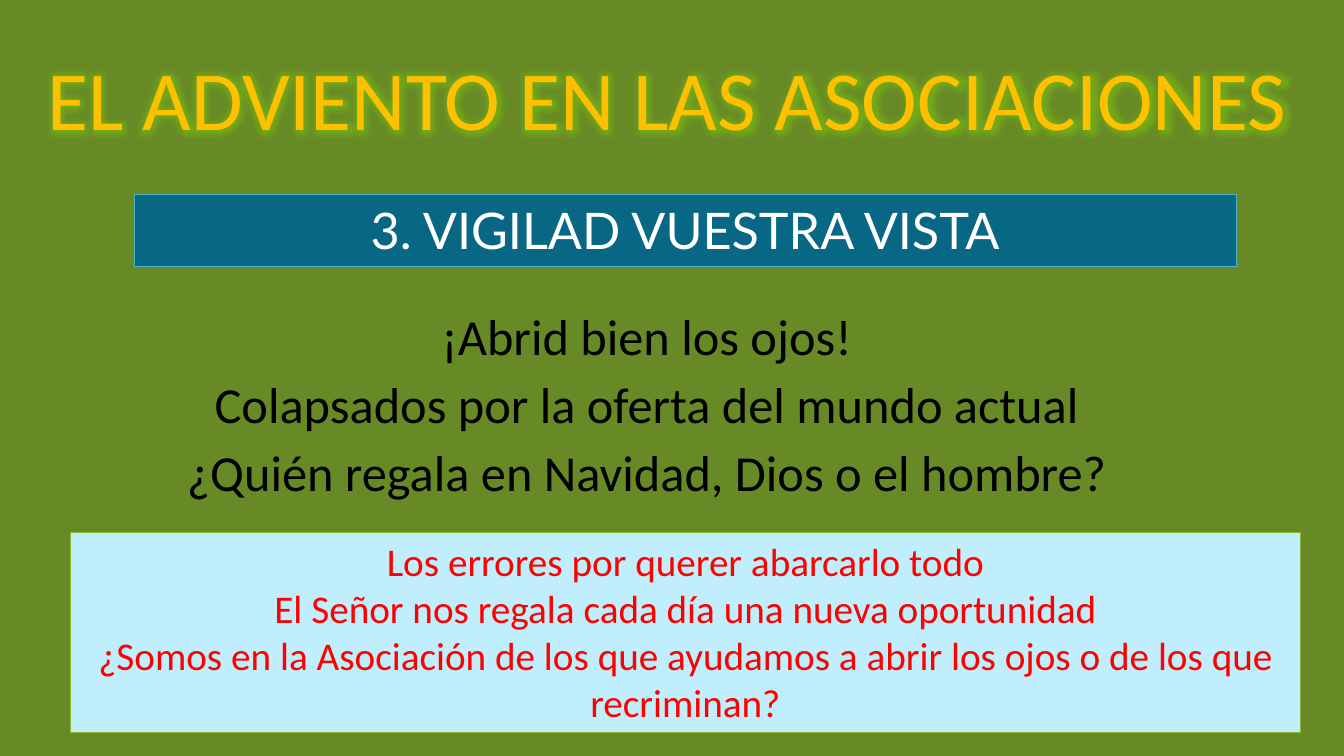
from lxml import etree
from pptx import Presentation
from pptx.dml.color import RGBColor
from pptx.enum import shapes, text
from pptx.oxml import ns
from pptx.util import Pt

GREEN = RGBColor(0x67, 0x8A, 0x26)
GOLD = RGBColor(0xFF, 0xC0, 0x00)
BLACK = RGBColor(0x00, 0x00, 0x00)
WHITE = RGBColor(0xFF, 0xFF, 0xFF)
RED = RGBColor(0xFF, 0x00, 0x00)
TEAL = RGBColor(0x07, 0x67, 0x85)
AQUA = RGBColor(0x4A, 0xB5, 0xC4)
SKY = RGBColor(0xC1, 0xEE, 0xFC)
LIME = RGBColor(0x8A, 0xB8, 0x33)
GLOW = RGBColor(0x76, 0xB2, 0x14)


def write(shape, lines, size, color, font="Calibri", anchor=text.MSO_ANCHOR.TOP,
          spacing=1.0, before=0):
    frame = shape.text_frame
    frame.word_wrap = True
    frame.vertical_anchor = anchor
    frame.text = "\n".join(lines)
    for para in frame.paragraphs:
        para.alignment = text.PP_ALIGN.CENTER
        para.line_spacing = spacing
        para.space_before = Pt(before)
        style = para.runs[0].font
        style.name, style.size = font, Pt(size)
        style.color.rgb = color


def add_glow(run, color, radius):
    props = run.font._element
    effects = etree.Element(ns.qn("a:effectLst"))
    glow = etree.SubElement(effects, ns.qn("a:glow"), rad=str(Pt(radius)))
    tint = etree.SubElement(glow, ns.qn("a:srgbClr"), val=str(color))
    etree.SubElement(tint, ns.qn("a:alpha"), val="80000")
    props.find(ns.qn("a:solidFill")).addnext(effects)


def add_text(slide, box):
    return slide.shapes.add_textbox(*map(Pt, box))


def add_panel(slide, box, fill, edge):
    panel = slide.shapes.add_shape(shapes.MSO_SHAPE.RECTANGLE, *map(Pt, box))
    panel.shadow.inherit = False
    panel.fill.solid()
    panel.fill.fore_color.rgb = fill
    panel.line.color.rgb = edge
    panel.line.width = Pt(0.5)
    return panel


def add_title(slide, box):
    title = add_text(slide, box)
    write(title, ["EL ADVIENTO EN LAS ASOCIACIONES"], 60, GOLD,
          anchor=text.MSO_ANCHOR.BOTTOM, spacing=0.9)
    add_glow(title.text_frame.paragraphs[0].runs[0], GLOW, 11)


def add_body(slide, box):
    write(add_text(slide, box), [
        "¡Abrid bien los ojos!",
        "Colapsados por la oferta del mundo actual",
        "¿Quién regala en Navidad, Dios o el hombre?",
    ], 36, BLACK, spacing=0.9, before=10)


def add_banner(slide, box):
    write(add_panel(slide, box, TEAL, AQUA), ["3. VIGILAD VUESTRA VISTA"],
          36, WHITE, font="Lato")


def add_notice(slide, box):
    write(add_panel(slide, box, SKY, LIME), [
        "Los errores por querer abarcarlo todo",
        "El Señor nos regala cada día una nueva oportunidad",
        "¿Somos en la Asociación de los que ayudamos a abrir los ojos "
        "o de los que recriminan?",
    ], 28, RED)


def main():
    deck = Presentation()
    deck.slide_width, deck.slide_height = Pt(960), Pt(540)
    slide = deck.slides.add_slide(deck.slide_layouts[6])

    # Background
    slide.background.fill.solid()
    slide.background.fill.fore_color.rgb = GREEN

    # Regions: left, top, width, height
    add_title(slide, (24, 23, 905, 86.5))
    add_body(slide, (24, 219, 876, 152))
    add_banner(slide, (96, 139, 787, 51))
    add_notice(slide, (50, 380, 879, 143))

    deck.save("out.pptx")


if __name__ == "__main__":
    main()
